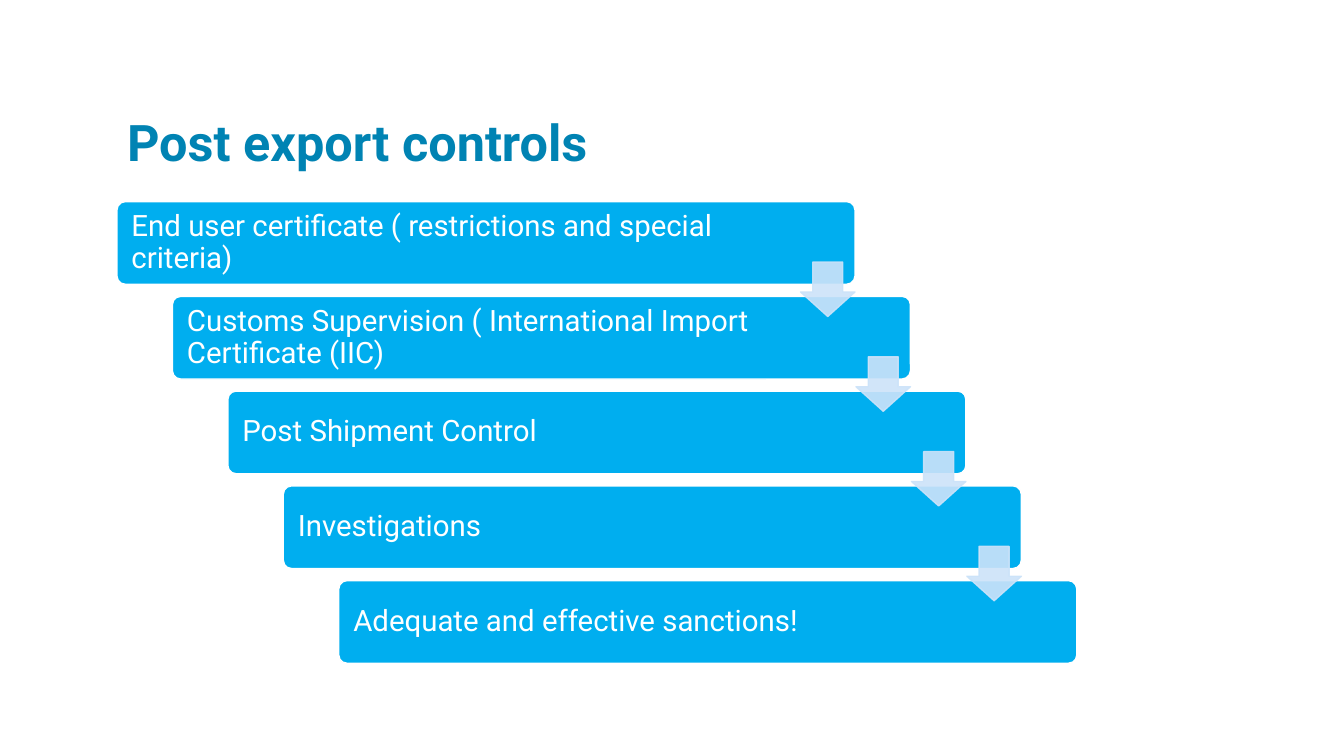
from lxml.etree import SubElement
from pptx import Presentation
from pptx.dml.color import RGBColor
from pptx.enum.shapes import MSO_SHAPE as SHAPE
from pptx.enum.text import MSO_ANCHOR as ANCHOR, MSO_AUTO_SIZE as AUTO, PP_ALIGN as ALIGN
from pptx.oxml.ns import qn
from pptx.util import Emu, Pt

PX = 9144
FONT = "Roboto"
WHITE, BLUE, TEAL, PALE = "FFFFFF", "00AEEF", "0083B3", "CCE3F9"
STEPS = [
    "End user certificate ( restrictions and special criteria)",
    "Customs Supervision ( International Import Certificate (IIC)",
    "Post Shipment Control",
    "Investigations",
    "Adequate and effective sanctions!",
]


def px(n):
    """Turn px into EMU."""
    return Emu(n * PX)


def rgb(value):
    """Turn a hex string into a colour."""
    return RGBColor.from_string(value)


def style_text(tf, text, size, color, spacing, bold=False):
    """Write one left-aligned paragraph into a text frame."""
    tf.word_wrap = True
    tf.auto_size = AUTO.NONE
    tf.text = text
    p = tf.paragraphs[0]
    p.alignment = ALIGN.LEFT
    p.line_spacing = spacing
    p.font.name, p.font.size, p.font.bold = FONT, Pt(size), bold
    p.font.color.rgb = rgb(color)


def add_block(slide, kind, x, y, w, h, fill, line, adjustments):
    """Add a filled and outlined preset shape."""
    s = slide.shapes.add_shape(kind, px(x), px(y), px(w), px(h))
    s.shadow.inherit = False
    for i, value in enumerate(adjustments):
        s.adjustments[i] = value
    s.fill.solid()
    s.fill.fore_color.rgb = rgb(fill)
    s.line.color.rgb = rgb(line)
    s.line.width = Pt(1)
    return s


def add_title(slide, text, x, y, w, h):
    """Place and format the title placeholder."""
    s = slide.shapes.title
    s.left, s.top, s.width, s.height = px(x), px(y), px(w), px(h)
    s.text_frame.vertical_anchor = ANCHOR.BOTTOM
    style_text(s.text_frame, text, 36, TEAL, 0.8, bold=True)


def add_bar(slide, text, x, y, w, h):
    """Add one step bar, keeping its right end free for the arrow."""
    s = add_block(slide, SHAPE.ROUNDED_RECTANGLE, x, y, w, h, BLUE, WHITE, [0.1])
    tf = s.text_frame
    tf.margin_left, tf.margin_right = px(12), px(120)
    tf.margin_top = tf.margin_bottom = px(9)
    tf.vertical_anchor = ANCHOR.MIDDLE
    style_text(tf, text, 21, WHITE, 0.9)


def add_arrow(slide, x, y, size):
    """Add a slightly transparent down arrow."""
    s = add_block(slide, SHAPE.DOWN_ARROW, x, y, size, size, PALE, PALE, [0.55, 0.45])
    for color in s._element.spPr.iter(qn("a:srgbClr")):
        SubElement(color, qn("a:alpha"), val="90000")


def add_staircase(slide, steps, x, y, w, h):
    """Fill the box with descending bars joined by arrows."""
    bar_w, bar_h, arrow = 732, 82, 54
    gaps = len(steps) - 1
    dx, dy = round((w - bar_w) / gaps), round((h - bar_h) / gaps)
    for i, text in enumerate(steps):
        add_bar(slide, text, x + i * dx, y + i * dy, bar_w, bar_h)
    for i in range(gaps):
        add_arrow(slide, x + i * dx + bar_w - arrow, y + i * dy + 60, arrow)


def main():
    """Build and save the presentation."""
    prs = Presentation()
    prs.slide_width, prs.slide_height = px(1333), px(750)
    slide = prs.slides.add_slide(prs.slide_layouts[5])
    add_title(slide, "Post export controls", 116, 58, 950, 117)
    add_staircase(slide, STEPS, 116, 200, 951, 458)
    prs.save("out.pptx")


if __name__ == "__main__":
    main()
